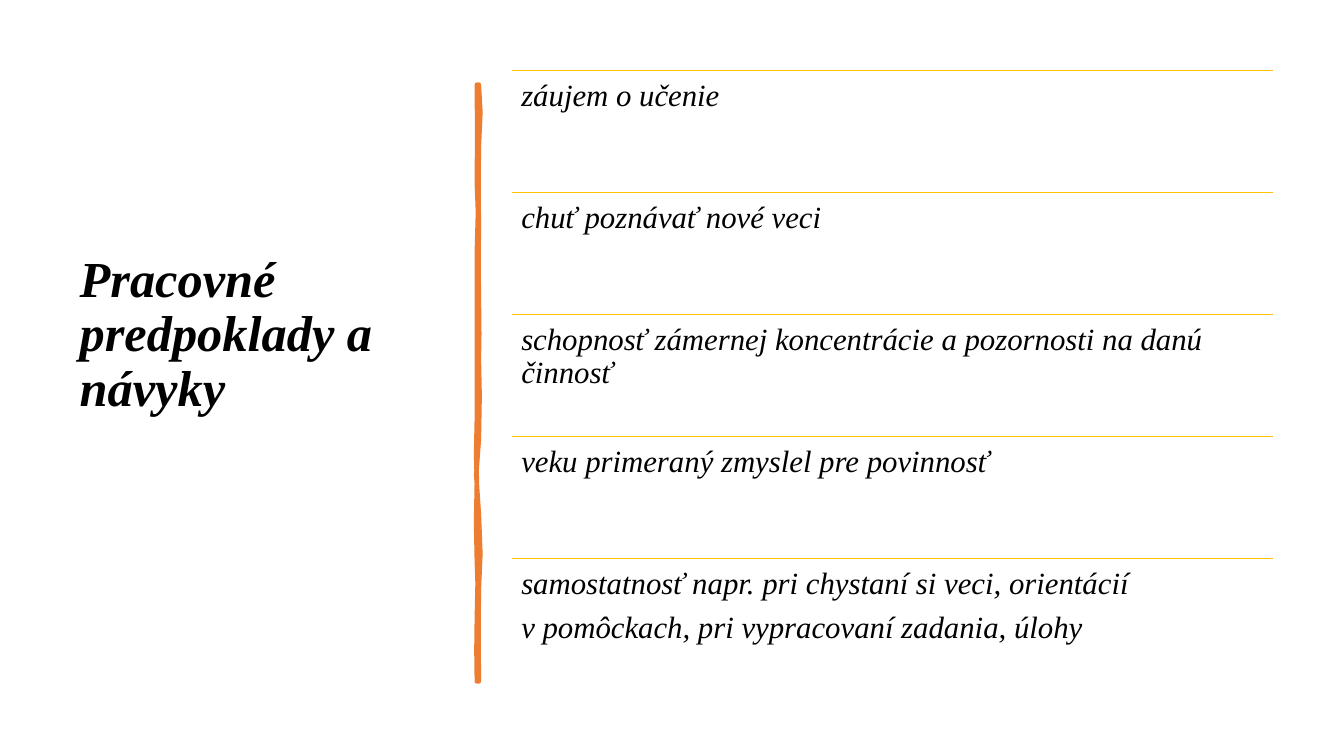
"""Build the slide on work prerequisites and habits."""
import dataclasses
import typing

import lxml.etree
import pptx
import pptx.dml.color
import pptx.enum.shapes
import pptx.enum.text
import pptx.oxml.ns
import pptx.shapes.shapetree
import pptx.slide
import pptx.util

Inches = pptx.util.Inches
Point = tuple[float, float]

COLORS = {"text": "000000", "rule": "FFC000", "bar": "ED7D31"}
TITLE_FONT = {"name": "Times New Roman", "size": pptx.util.Pt(36), "bold": True, "italic": True}
ITEM_FONT = {"name": "Times New Roman", "size": pptx.util.Pt(22), "bold": False, "italic": True}
ITEM_PARAGRAPH = {"line_spacing": 0.9, "space_after": pptx.util.Pt(8)}
TITLE_PARAGRAPH = {"line_spacing": 0.9, "alignment": pptx.enum.text.PP_ALIGN.LEFT}
TITLE_BOX = {"left": Inches(0.69), "top": Inches(0.7), "width": Inches(3.74), "height": Inches(5.26)}
TITLE_FRAME = {
    "word_wrap": True,
    "auto_size": pptx.enum.text.MSO_AUTO_SIZE.NONE,
    "vertical_anchor": pptx.enum.text.MSO_ANCHOR.MIDDLE,
}
ITEM_FRAME = {"word_wrap": True} | {
    f"margin_{side}": Inches(0.09) for side in ("left", "top", "right", "bottom")
}
LIST_LEFT, LIST_TOP, LIST_WIDTH, ROW_HEIGHT = 5.08, 0.7, 7.55, 1.21
BAR_START = (4.75, 0.84)
BAR_CURVES = (
    ((4.77, 1.02), (4.77, 1.19), (4.75, 1.46)),
    ((4.73, 1.73), (4.76, 1.95), (4.75, 2.26)),
    ((4.74, 2.57), (4.75, 2.62), (4.75, 2.94)),
    ((4.74, 3.25), (4.77, 3.42), (4.75, 3.56)),
    ((4.73, 3.7), (4.79, 4.14), (4.75, 4.36)),
    ((4.71, 4.57), (4.72, 4.84), (4.75, 5.1)),
    ((4.77, 5.36), (4.77, 5.64), (4.75, 5.84)),
    ((4.73, 6.03), (4.76, 6.5), (4.75, 6.76)),
    ((4.74, 6.76), (4.73, 6.76), (4.73, 6.76)),
    ((4.74, 6.46), (4.71, 6.44), (4.73, 6.13)),
    ((4.74, 5.83), (4.74, 5.7), (4.73, 5.57)),
    ((4.72, 5.44), (4.72, 4.95), (4.73, 4.77)),
    ((4.73, 4.59), (4.71, 4.45), (4.73, 4.15)),
    ((4.74, 3.86), (4.72, 3.73), (4.73, 3.35)),
    ((4.74, 2.98), (4.72, 2.81), (4.73, 2.5)),
    ((4.74, 2.18), (4.75, 2), (4.73, 1.81)),
    ((4.7, 1.63), (4.77, 1.04), (4.73, 0.84)),
)


@dataclasses.dataclass(frozen=True)
class Item:
    """One ruled row of the list."""

    lines: tuple[str, ...]


ITEMS = (
    Item(("záujem o učenie",)),
    Item(("chuť poznávať nové veci",)),
    Item(("schopnosť zámernej koncentrácie a pozornosti na danú činnosť",)),
    Item(("veku primeraný zmyslel pre povinnosť",)),
    Item((
        "samostatnosť napr. pri chystaní si veci, orientácií",
        "v pomôckach, pri vypracovaní zadania, úlohy",
    )),
)


def rgb(name: str) -> pptx.dml.color.RGBColor:
    """Return a named colour."""
    return pptx.dml.color.RGBColor.from_string(COLORS[name])


def apply(target: typing.Any, values: dict[str, typing.Any]) -> None:
    """Set each format value on the target."""
    for key, value in values.items():
        setattr(target, key, value)


def write(tf: typing.Any, lines: tuple[str, ...], paragraph: dict, font: dict) -> None:
    """Write formatted paragraphs into a text frame."""
    for i, line in enumerate(lines):
        p = tf.add_paragraph() if i else tf.paragraphs[0]
        apply(p, paragraph)
        r = p.add_run()
        r.text = line
        apply(r.font, font)
        r.font.color.rgb = rgb("text")


def midpoint(*controls: Point) -> Point:
    """Return the middle of a cubic curve."""
    x, y = ((a + 3 * b + 3 * c + d) / 8 for a, b, c, d in zip(*controls))
    return x, y


def add_title(s: pptx.slide.Slide) -> None:
    """Place and format the title."""
    sp = s.shapes.title
    apply(sp, TITLE_BOX)
    apply(sp.text_frame, TITLE_FRAME)
    write(sp.text_frame, ("Pracovné predpoklady a návyky",), TITLE_PARAGRAPH, TITLE_FONT)


def add_bar(s: pptx.slide.Slide) -> None:
    """Draw the hand-drawn vertical bar."""
    points = [BAR_START]
    for a, b, end in BAR_CURVES:
        points += [midpoint(points[-1], a, b, end), end]
    outline = [(Inches(x), Inches(y)) for x, y in points]
    builder = s.shapes.build_freeform(*outline[0])
    builder.add_line_segments(outline[1:], close=True)
    sp = builder.convert_to_shape()
    sp.shadow.inherit = False
    sp.fill.solid()
    sp.fill.fore_color.rgb = rgb("bar")
    sp.line.color.rgb = rgb("bar")
    sp.line.width = pptx.util.Pt(3.25)


def add_item(shapes: pptx.shapes.shapetree.GroupShapes, item: Item, top: float) -> None:
    """Draw a rule with its text below."""
    left, y, width = Inches(LIST_LEFT), Inches(top), Inches(LIST_WIDTH)
    rule = shapes.add_connector(
        pptx.enum.shapes.MSO_CONNECTOR.STRAIGHT, left, y, left + width, y
    )
    rule.line.color.rgb = rgb("rule")
    rule.line.width = pptx.util.Pt(1)
    lxml.etree.SubElement(rule._element.spPr, pptx.oxml.ns.qn("a:effectLst"))
    tf = shapes.add_textbox(left, y, width, Inches(ROW_HEIGHT)).text_frame
    apply(tf, ITEM_FRAME)
    write(tf, item.lines, ITEM_PARAGRAPH, ITEM_FONT)


def main() -> None:
    """Build and save the presentation."""
    prs = pptx.Presentation()
    apply(prs, {"slide_width": Inches(13.33), "slide_height": Inches(7.5)})
    s = prs.slides.add_slide(prs.slide_layouts.get_by_name("Title Only"))
    add_title(s)
    add_bar(s)
    group = s.shapes.add_group_shape()
    for i, item in enumerate(ITEMS):
        add_item(group.shapes, item, LIST_TOP + i * ROW_HEIGHT)
    prs.save("out.pptx")


if __name__ == "__main__":
    main()
